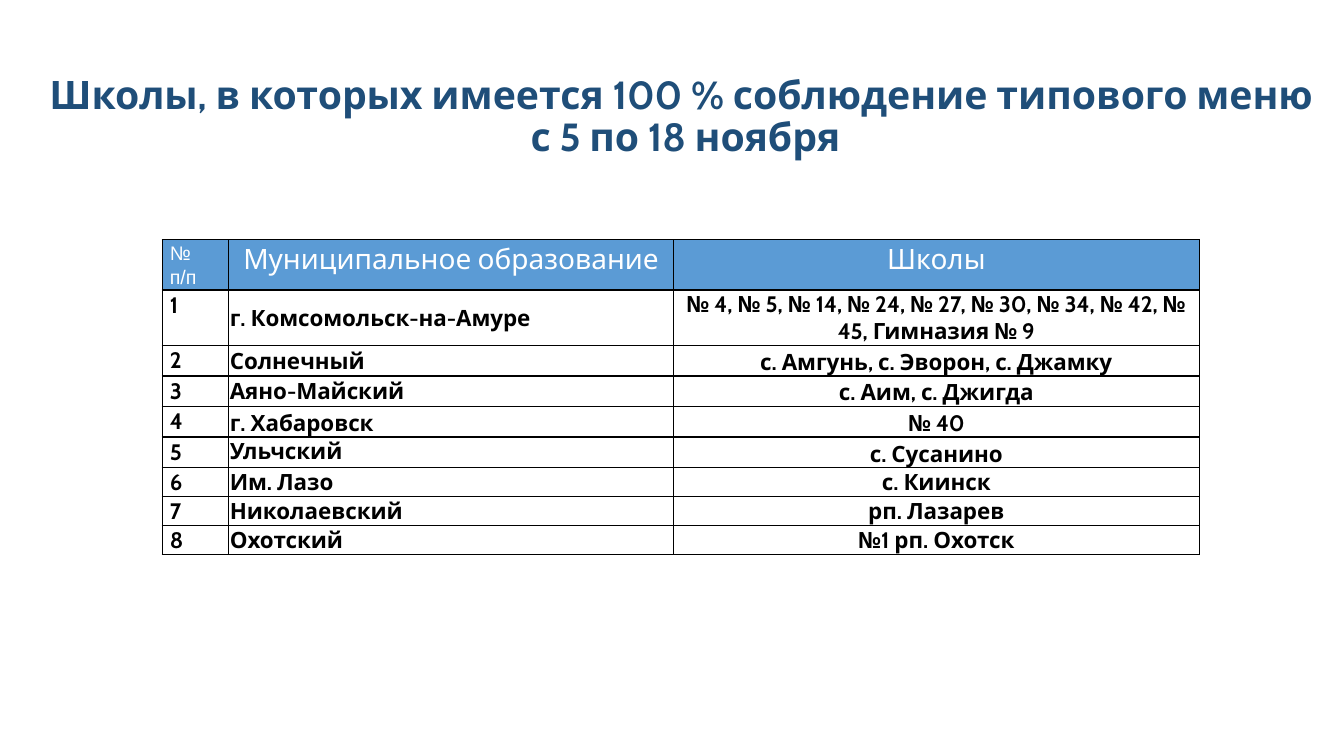
from lxml import etree
from pptx import Presentation
from pptx.dml.color import RGBColor
from pptx.enum.text import MSO_ANCHOR, PP_ALIGN
from pptx.oxml.ns import qn
from pptx.util import Pt

TOP, MIDDLE, BOTTOM = MSO_ANCHOR.TOP, MSO_ANCHOR.MIDDLE, MSO_ANCHOR.BOTTOM
LEFT, CENTER = PP_ALIGN.LEFT, PP_ALIGN.CENTER
WHITE = RGBColor(0xFF, 0xFF, 0xFF)
BLACK = RGBColor(0x00, 0x00, 0x00)
NAVY = RGBColor(0x1F, 0x4E, 0x79)
BLUE = RGBColor(0x5B, 0x9B, 0xD5)

TITLE = "Школы, в которых имеется 100 % соблюдение типового меню \vс 5 по 18 ноября"
HEADERS = ["№ п/п", "Муниципальное образование", "Школы"]
SCHOOLS = [
    ("г. Комсомольск-на-Амуре", MIDDLE,
     "№ 4, № 5, № 14, № 24, № 27, № 30, № 34, № 42, № 45, Гимназия № 9"),
    ("Солнечный", MIDDLE, "с. Амгунь, с. Эворон, с. Джамку"),
    ("Аяно-Майский", MIDDLE, "с. Аим, с. Джигда"),
    ("г. Хабаровск", BOTTOM, "№ 40"),
    ("Ульчский", TOP, "с. Сусанино"),
    ("Им. Лазо", BOTTOM, "с. Киинск"),
    ("Николаевский", BOTTOM, "рп. Лазарев"),
    ("Охотский", BOTTOM, "№1 рп. Охотск"),
]
COLUMN_WIDTHS = [47.5, 317.5, 376]
ROW_HEIGHTS = [35.4, 39.6] + [21.8] * 4 + [20.7] * 3

WIDE_MARGINS = {"margin_left": Pt(5.4), "margin_right": Pt(5.4),
                "margin_top": 0, "margin_bottom": 0}
THIN_MARGINS = {"margin_left": Pt(0.75), "margin_right": Pt(0.75),
                "margin_top": Pt(0.75), "margin_bottom": 0}


def set_attributes(target, values):
    for name, value in values.items():
        setattr(target, name, value)


class SlideBuilder:
    """Hold the style and the current slide, and add elements to it."""

    font = {"name": "Cabin", "size": Pt(16), "bold": True}
    border_width = Pt(1)

    def __init__(self, slide):
        self.slide = slide

    def add_text(self, frame, text, color, paragraph_format, **font):
        paragraph = frame.paragraphs[0]
        paragraph.text = text
        set_attributes(paragraph, paragraph_format)
        for run in paragraph.runs:
            set_attributes(run.font, {**self.font, **font})
            run.font.color.rgb = color

    def add_title(self, text, left, top, width, height):
        shape = self.slide.shapes.add_textbox(Pt(left), Pt(top), Pt(width), Pt(height))
        set_attributes(shape.text_frame, {"word_wrap": True, "vertical_anchor": MIDDLE})
        self.add_text(shape.text_frame, text, NAVY,
                      {"alignment": CENTER, "line_spacing": 0.9}, size=Pt(28))

    def add_table(self, left, top, widths, heights):
        shape = self.slide.shapes.add_table(
            len(heights), len(widths), Pt(left), Pt(top), Pt(sum(widths)), Pt(sum(heights)))
        table = shape.table
        set_attributes(table, {"first_row": False, "horz_banding": False})
        for column, width in zip(table.columns, widths):
            column.width = Pt(width)
        for row, height in zip(table.rows, heights):
            row.height = Pt(height)
        return table

    def add_borders(self, cell):
        properties = cell._tc.get_or_add_tcPr()
        for side in ("a:lnL", "a:lnR", "a:lnT", "a:lnB"):
            line = etree.SubElement(properties, qn(side), w=str(self.border_width))
            fill = etree.SubElement(line, qn("a:solidFill"))
            etree.SubElement(fill, qn("a:srgbClr"), val=str(BLACK))

    def fill_cell(self, cell, text, color, anchor, margins, paragraph_format,
                  background=None, **font):
        set_attributes(cell, {**margins, "vertical_anchor": anchor})
        self.add_borders(cell)
        if background is None:
            cell.fill.background()
        else:
            cell.fill.solid()
            cell.fill.fore_color.rgb = background
        self.add_text(cell.text_frame, text, color, paragraph_format, **font)


def main():
    presentation = Presentation()
    set_attributes(presentation, {"slide_width": Pt(960), "slide_height": Pt(540)})
    builder = SlideBuilder(presentation.slides.add_slide(presentation.slide_layouts[6]))
    builder.add_title(TITLE, 18.7, 44.6, 941.8, 79.2)
    table = builder.add_table(115.9, 171.2, COLUMN_WIDTHS, ROW_HEIGHTS)

    number_format = {"alignment": LEFT, "line_spacing": 1.07}
    heading_format = {"alignment": CENTER, "line_spacing": Pt(16.8)}
    for column, text in enumerate(HEADERS):
        layout = heading_format if column else number_format
        font = {"size": Pt(20)} if column else {"size": Pt(14), "name": "Arial"}
        builder.fill_cell(table.cell(0, column), text, WHITE, MIDDLE, WIDE_MARGINS,
                          layout, BLUE, bold=False, **font)

    for number, (district, anchor, schools) in enumerate(SCHOOLS, 1):
        cells = [
            (str(number), TOP, WIDE_MARGINS, number_format),
            (district, anchor, THIN_MARGINS, {"alignment": LEFT}),
            (schools, BOTTOM, THIN_MARGINS, {"alignment": CENTER}),
        ]
        for column, (text, position, margins, layout) in enumerate(cells):
            builder.fill_cell(table.cell(number, column), text, BLACK, position,
                              margins, layout)
    presentation.save("out.pptx")


if __name__ == "__main__":
    main()
